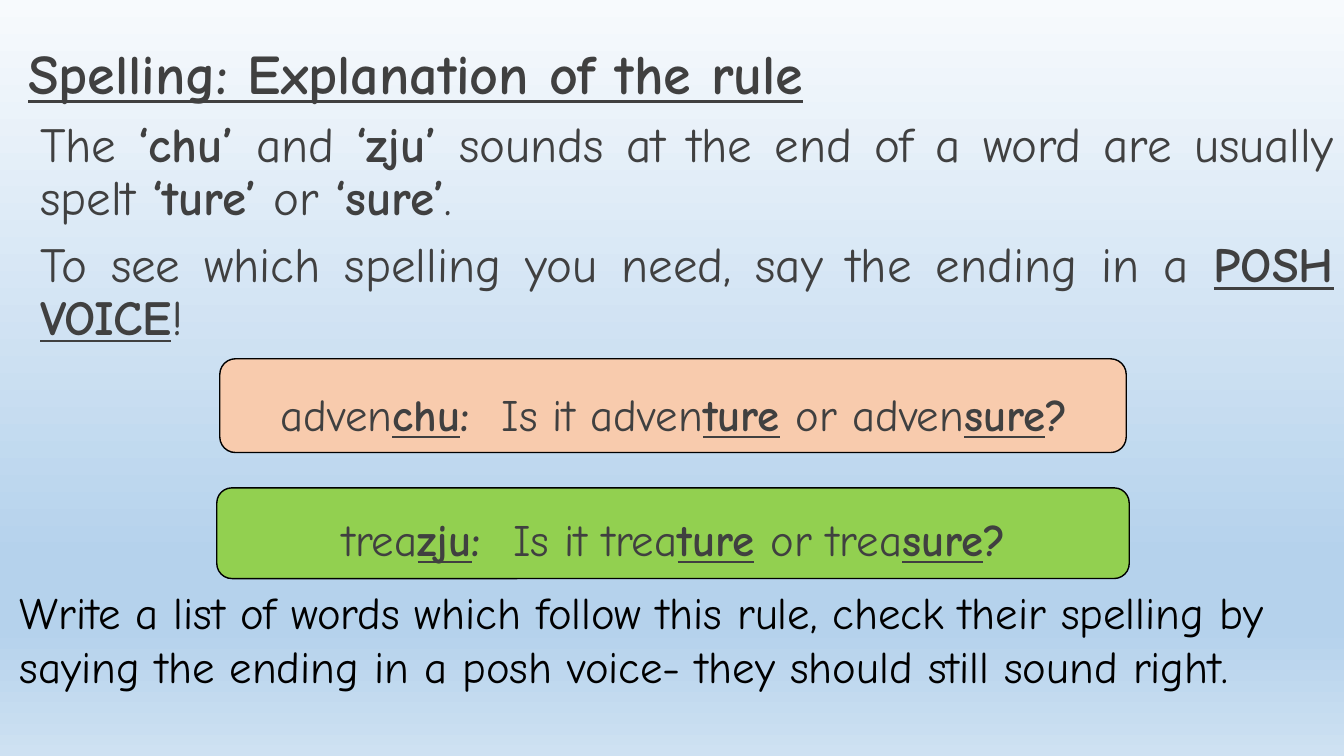
from lxml.etree import SubElement
from pptx import Presentation
from pptx.dml.color import RGBColor
from pptx.enum.shapes import MSO_SHAPE
from pptx.enum.text import MSO_ANCHOR, PP_ALIGN
from pptx.oxml.ns import qn
from pptx.util import Inches, Pt

FONT = "Comic Neue"
GREY = RGBColor(0x40, 0x40, 0x40)
BLACK = RGBColor(0x00, 0x00, 0x00)
PEACH = RGBColor(0xF8, 0xCB, 0xAD)
GREEN = RGBColor(0x92, 0xD0, 0x50)
SKY_STOPS = [
    (0, RGBColor(0xF7, 0xFA, 0xFD)),
    (74, RGBColor(0xB5, 0xD2, 0xEC)),
    (83, RGBColor(0xB5, 0xD2, 0xEC)),
    (100, RGBColor(0xCE, 0xE1, 0xF2)),
]


def add_runs(paragraph, size, color, runs):
    """Add (text, style) runs; in style, b is bold and u is underlined."""
    for text, style in runs:
        run = paragraph.add_run()
        run.text = text
        run.font.name = FONT
        run.font.size = Pt(size)
        run.font.color.rgb = color
        run.font.bold = "b" in style
        run.font.underline = "u" in style


def add_text_box(shapes, left, top, width, height):
    box = shapes.add_textbox(Inches(left), Inches(top), Inches(width), Inches(height))
    box.text_frame.word_wrap = True
    return box.text_frame


prs = Presentation()
prs.slide_width, prs.slide_height = Inches(13.33), Inches(7.5)
slide = prs.slides.add_slide(prs.slide_layouts[5])

# Background: vertical sky gradient
sky = slide.background.fill
sky.gradient()
sky.gradient_angle = 270
stop_list = next(slide.element.iter(qn("a:gsLst")))
for old_stop in list(stop_list):
    stop_list.remove(old_stop)
for position, color in SKY_STOPS:
    stop = SubElement(stop_list, qn("a:gs"), pos=str(position * 1000))
    SubElement(stop, qn("a:srgbClr"), val=str(color))

# Title
title = slide.shapes.title
title.left, title.top = Inches(0.18), Inches(0.13)
title.width, title.height = Inches(9), Inches(1.25)
title.text_frame.vertical_anchor = MSO_ANCHOR.MIDDLE
heading = title.text_frame.paragraphs[0]
heading.alignment = PP_ALIGN.LEFT
heading.line_spacing = 0.9
add_runs(heading, 40, GREY, [("Spelling: Explanation of the rule", "bu")])

# The rule
rule = add_text_box(slide.shapes, 0.3, 1.14, 13.03, 2.67)
rule_paragraphs = [
    [("The ", ""), ("‘chu’ ", "b"), ("and ", ""), ("‘zju’ ", "b"),
     ("sounds at the end of a word are usually spelt ", ""),
     ("‘ture’ ", "b"), ("or ", ""), ("‘sure’", "b"), (".", "")],
    [("To see which spelling you need, say the ending in a ", ""),
     ("POSH VOICE", "bu"), ("!", "")],
]
for index, runs in enumerate(rule_paragraphs):
    paragraph = rule.add_paragraph() if index else rule.paragraphs[0]
    paragraph.alignment = PP_ALIGN.JUSTIFY
    paragraph.line_spacing = 0.9
    paragraph.space_before = Pt(10)
    add_runs(paragraph, 35, GREY, runs)

# Example questions: a rounded panel with its text on top
examples = [
    ("adven", "chu", PEACH, (2.18, 3.56, 8.99, 0.93), 3.52),
    ("trea", "zju", GREEN, (2.15, 4.84, 9.05, 0.9), 4.76),
]
for stem, sound, color, panel_box, text_top in examples:
    example = slide.shapes.add_group_shape()
    panel = example.shapes.add_shape(
        MSO_SHAPE.ROUNDED_RECTANGLE, *[Inches(length) for length in panel_box])
    panel.shadow.inherit = False
    panel.fill.solid()
    panel.fill.fore_color.rgb = color
    panel.line.color.rgb = BLACK
    panel.line.width = Pt(1)

    question = add_text_box(example.shapes, 2.21, text_top, 8.95, 0.94).paragraphs[0]
    question.alignment = PP_ALIGN.CENTER
    question.line_spacing = 1.5
    question.space_before = Pt(6.4)
    add_runs(question, 32, GREY, [
        (stem, ""), (sound, "bu"), (":  ", "b"),
        (f"Is it {stem}", ""), ("ture", "bu"), (" ", "b"),
        (f"or {stem}", ""), ("sure", "bu"), ("?", "b"),
    ])

# Task
task = add_text_box(slide.shapes, 0.1, 5.75, 13.14, 1.72)
add_runs(task.paragraphs[0], 32, BLACK, [
    ("Write a list of words which follow this rule, check their spelling by "
     "saying the ending in a posh voice- they should still sound right.", "")])

prs.save("out.pptx")
